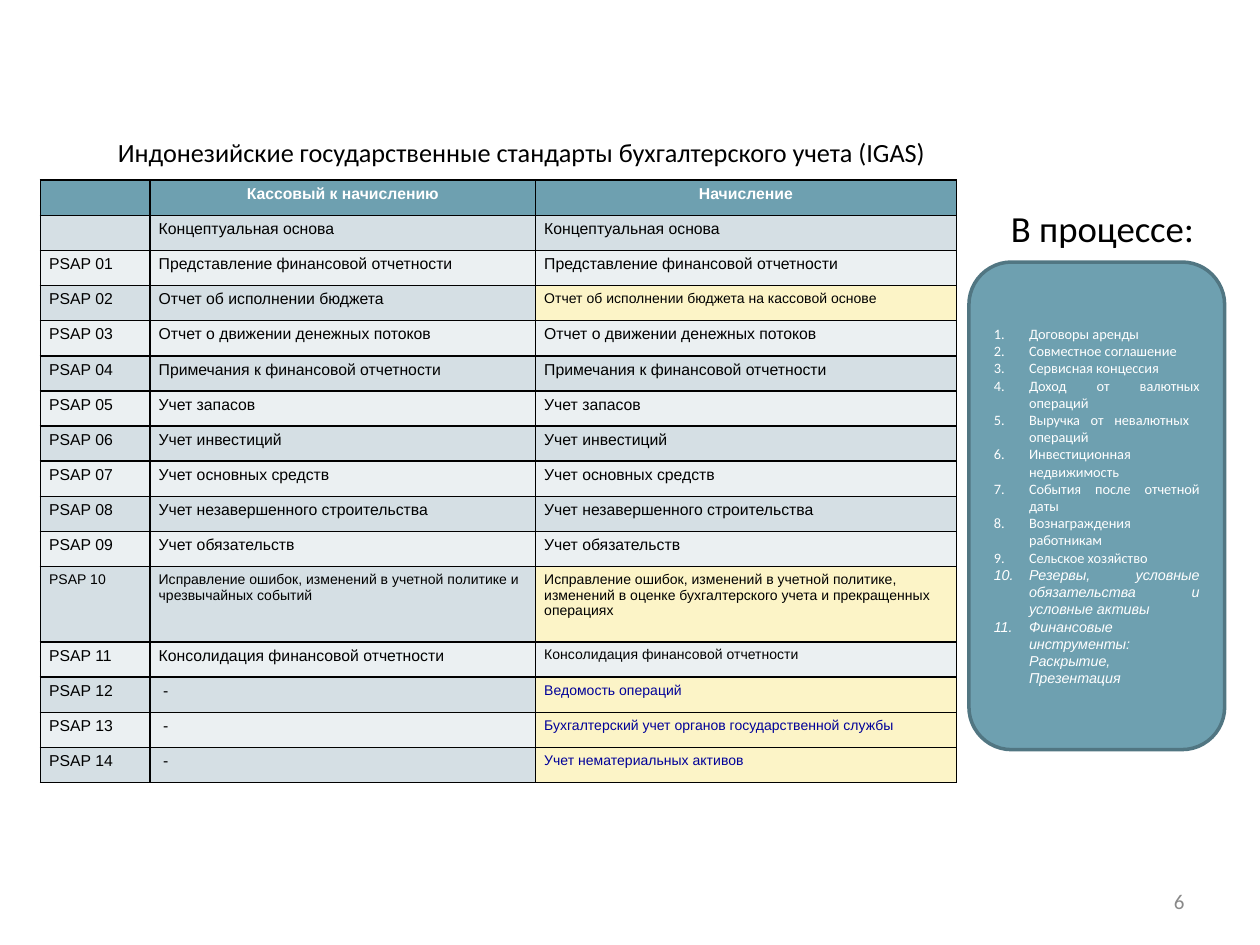
from lxml.etree import SubElement
from pptx import Presentation
from pptx.dml.color import RGBColor
from pptx.enum.shapes import MSO_SHAPE as Shape
from pptx.enum.text import MSO_ANCHOR as Anchor, MSO_AUTO_SIZE as AutoSize, PP_ALIGN as Align
from pptx.oxml.ns import qn
from pptx.util import Inches, Pt

BLACK = RGBColor(0x00, 0x00, 0x00)
WHITE = RGBColor(0xFF, 0xFF, 0xFF)
GRAY = RGBColor(0x89, 0x89, 0x89)
TEAL = RGBColor(0x6E, 0xA0, 0xB0)
DARK_TEAL = RGBColor(0x51, 0x76, 0x82)
BANDS = RGBColor(0xD5, 0xDF, 0xE4), RGBColor(0xEB, 0xF0, 0xF2)
YELLOW = RGBColor(0xFC, 0xF4, 0xC7)
NAVY = RGBColor(0x00, 0x00, 0x99)

# The grid has 100 columns and 75 rows
GRID_COLUMNS, GRID_ROWS = 100, 75

# Standards PSAP 01 to 14: cash towards accrual, accrual (None: same text)
STANDARDS = [
    ("Представление финансовой отчетности", None),
    ("Отчет об исполнении бюджета", "Отчет об исполнении бюджета на кассовой основе"),
    ("Отчет о движении денежных потоков", None),
    ("Примечания к финансовой отчетности", None),
    ("Учет запасов", None),
    ("Учет инвестиций", None),
    ("Учет основных средств", None),
    ("Учет незавершенного строительства", None),
    ("Учет обязательств", None),
    ("Исправление ошибок, изменений в учетной политике и чрезвычайных событий",
     "Исправление ошибок, изменений в учетной политике, изменений в оценке "
     "бухгалтерского учета и прекращенных операциях"),
    ("Консолидация финансовой отчетности", None),
    (" -", "Ведомость операций"),
    (" -", "Бухгалтерский учет органов государственной службы"),
    (" -", "Учет нематериальных активов"),
]
IN_PROGRESS = [
    "Договоры аренды",
    "Совместное соглашение",
    "Сервисная концессия",
    "Доход от валютных операций",
    "Выручка от невалютных  операций",
    "Инвестиционная недвижимость",
    "События после отчетной даты",
    "Вознаграждения работникам",
    "Сельское хозяйство",
    "Резервы, условные обязательства и условные активы",
    "Финансовые инструменты: Раскрытие, Презентация",
]
FIRST_ITALIC = 9


class SlideBuilder:
    def __init__(self, presentation):
        self.column = presentation.slide_width / GRID_COLUMNS
        self.row = presentation.slide_height / GRID_ROWS
        self.slide = presentation.slides.add_slide(presentation.slide_layouts[5])

    def box(self, left, top, width, height):
        return (round(left * self.column), round(top * self.row),
                round(width * self.column), round(height * self.row))

    def format_paragraph(self, paragraph, size, color, align=Align.LEFT,
                         font="Calibri", bold=False, italic=False):
        paragraph.alignment = align
        for run in paragraph.runs:
            run.font.name, run.font.size = font, Pt(size)
            run.font.bold, run.font.italic = bold, italic
            run.font.color.rgb = color
        if not paragraph.runs:
            SubElement(paragraph._p, qn("a:endParaRPr"), sz=str(size * 100))

    def fill_text(self, shape, text, size, color, align, margins=(0.07, 0.04)):
        frame = shape.text_frame
        frame.text = text
        frame.word_wrap, frame.auto_size = True, AutoSize.NONE
        frame.vertical_anchor = Anchor.MIDDLE
        frame.margin_left = frame.margin_right = Inches(margins[0])
        frame.margin_top = frame.margin_bottom = Inches(margins[1])
        for paragraph in frame.paragraphs:
            self.format_paragraph(paragraph, size, color, align)

    def title(self, text, place, size):
        shape = self.slide.shapes.title
        shape.left, shape.top, shape.width, shape.height = self.box(*place)
        self.fill_text(shape, text, size, BLACK, Align.CENTER)

    def label(self, text, place, size, color=BLACK, align=Align.CENTER, **options):
        shape = self.slide.shapes.add_textbox(*self.box(*place))
        self.fill_text(shape, text, size, color, align, **options)

    def table(self, place, widths, heights):
        shape = self.slide.shapes.add_table(len(heights), len(widths), *self.box(*place))
        table = shape.table
        for column, width in zip(table.columns, widths):
            column.width = round(width * self.column)
        for row, height in zip(table.rows, heights):
            row.height = round(height * self.row)
        return table

    def cell(self, cell, text, fill, size=9, color=BLACK, align=Align.LEFT, bold=False):
        cell.text = text
        cell.margin_left = cell.margin_right = Inches(0.07)
        cell.margin_top = cell.margin_bottom = Inches(0.04)
        self.format_paragraph(cell.text_frame.paragraphs[0], size, color, align, "Arial", bold)
        properties = cell._tc.get_or_add_tcPr()
        for side in ("a:lnL", "a:lnR", "a:lnT", "a:lnB"):
            line = SubElement(properties, qn(side), w=str(Pt(1)))
            SubElement(SubElement(line, qn("a:solidFill")), qn("a:srgbClr"), val=str(BLACK))
        cell.fill.solid()
        cell.fill.fore_color.rgb = fill

    def numbered_panel(self, items, place, size):
        shape = self.slide.shapes.add_shape(Shape.ROUNDED_RECTANGLE, *self.box(*place))
        shape.shadow.inherit = False
        shape.fill.solid()
        shape.fill.fore_color.rgb = TEAL
        shape.line.color.rgb, shape.line.width = DARK_TEAL, Pt(2)
        self.fill_text(shape, "\n".join(items), size, WHITE, Align.JUSTIFY, (0.1, 0.05))
        indent = Inches(0.28)
        for index, paragraph in enumerate(shape.text_frame.paragraphs):
            if index >= FIRST_ITALIC:
                self.format_paragraph(paragraph, size, WHITE, Align.JUSTIFY, "Arial", italic=True)
            properties = paragraph._p.get_or_add_pPr()
            properties.set("marL", str(indent))
            properties.set("indent", str(-indent))
            SubElement(properties, qn("a:buFont"), typeface="+mj-lt")
            SubElement(properties, qn("a:buAutoNum"), type="arabicPeriod")


def add_standards(builder):
    heights = [2.79] * (len(STANDARDS) + 2)
    heights[11] = 6
    table = builder.table((3.2, 14.3, 72.7, 47.8), (8.7, 30.6, 33.4), heights)

    # Header
    for column, text in enumerate(("", "Кассовый к начислению", "Начисление")):
        builder.cell(table.cell(0, column), text, TEAL, color=WHITE,
                     align=Align.CENTER, bold=True)

    # Body: yellow marks where accrual differs, navy marks what is new
    rows = [("", "Концептуальная основа", None)]
    rows += [(f"PSAP {number:02}", *pair) for number, pair in enumerate(STANDARDS, 1)]
    for index, (code, cash, accrual) in enumerate(rows):
        band = BANDS[index % 2]
        size = 8 if code == "PSAP 10" else 9
        accrual_size = 8 if accrual or code == "PSAP 11" else 9
        color = NAVY if cash == " -" else BLACK
        code_cell, cash_cell, accrual_cell = table.rows[index + 1].cells
        builder.cell(code_cell, code, band, size)
        builder.cell(cash_cell, cash, band, size)
        builder.cell(accrual_cell, accrual or cash, YELLOW if accrual else band,
                     accrual_size, color)


def main():
    presentation = Presentation()
    presentation.slide_width, presentation.slide_height = Inches(10), Inches(7.5)
    builder = SlideBuilder(presentation)

    # Title and table of standards
    add_standards(builder)
    builder.title("Индонезийские государственные стандарты бухгалтерского учета (IGAS) ",
                  (-2, 9.3, 87.3, 5.5), 15)

    # Page number
    builder.label("6", (71.7, 69.5, 23.3, 4), 12, GRAY, Align.RIGHT, margins=(0.1, 0.05))

    # Standards in progress
    builder.label("В процессе:", (77.8, 15.3, 19.4, 5.5), 21)
    builder.numbered_panel(IN_PROGRESS, (76.9, 20.8, 20.3, 38.7), 8.2)

    presentation.save("out.pptx")


if __name__ == "__main__":
    main()
